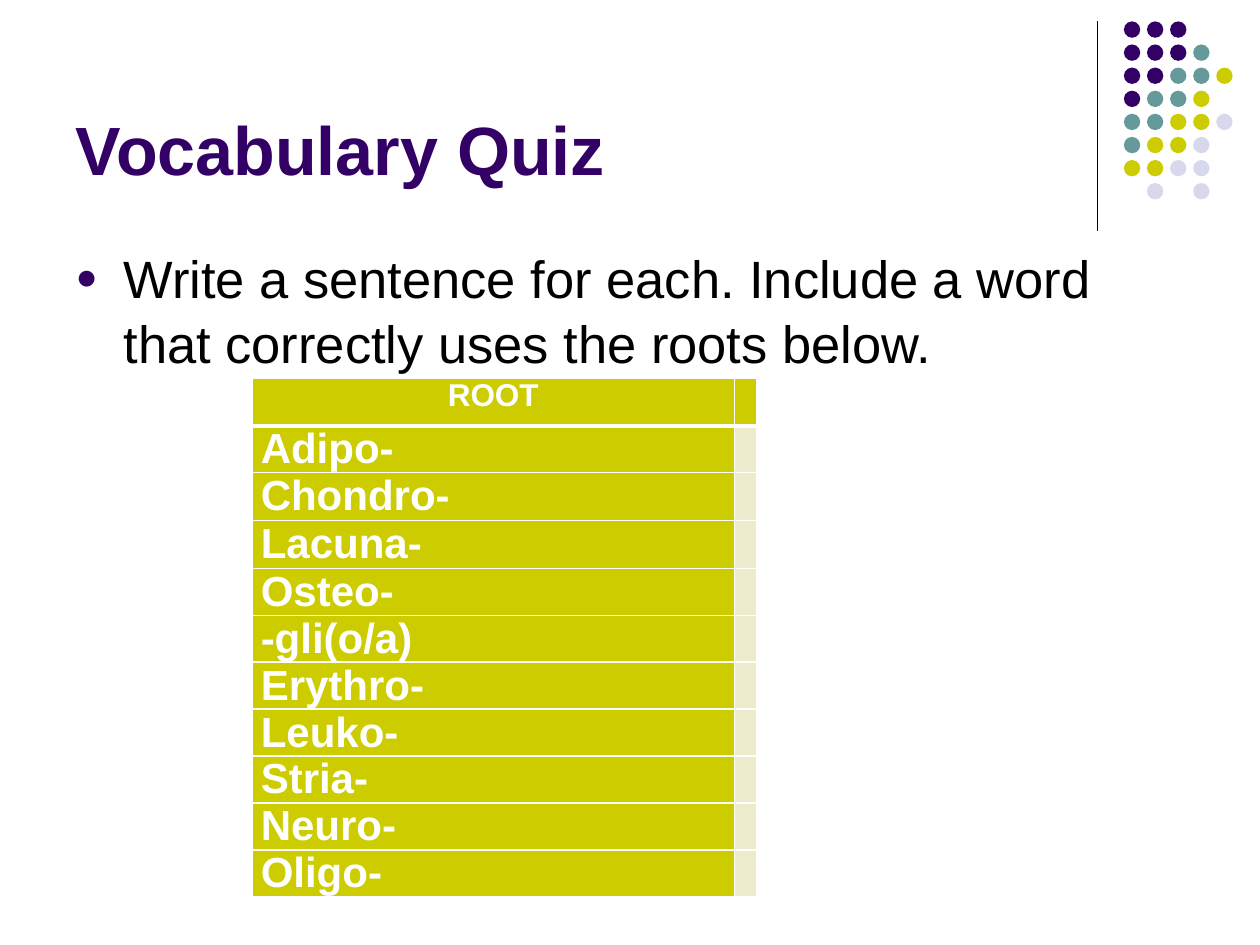
"""Build the vocabulary quiz slide with its dotted corner and table of roots."""
import pptx
import pptx.dml.color
import pptx.enum.shapes
import pptx.enum.text
import pptx.oxml
import pptx.oxml.ns
import pptx.util
from pptx.util import Inches

COLOURS = {
    "purple": "330066", "teal": "669999", "lime": "CCCC00",
    "lilac": "D8D8EC", "pale": "ECECCC", "white": "FFFFFF", "black": "000000",
}
DOT_COLOURS = {"P": "purple", "T": "teal", "L": "lime", "V": "lilac"}
DOT_ROWS = ["PPP", "PPPT", "PPTTL", "PTTL", "TTLLV", "TLLV", "LLVV", " V V"]
DOT_SIZE = 0.13
DOT_PITCH = 0.55 / 3
ROOTS = ["Adipo-", "Chondro-", "Lacuna-", "Osteo-", "-gli(o/a)",
         "Erythro-", "Leuko-", "Stria-", "Neuro-", "Oligo-"]
COLUMN_WIDTHS = [3.83, 0.18]
ROW_HEIGHTS = [0.38, 0.37, 0.38, 0.38] + [0.37] * 7
ALIGN = pptx.enum.text.PP_ALIGN
ANCHOR = pptx.enum.text.MSO_ANCHOR


def rgb(colour):
    return pptx.dml.color.RGBColor.from_string(COLOURS[colour])


def apply_format(target, values):
    for name, value in values.items():
        setattr(target, name, value)


def format_font(font, size, colour, bold=False):
    apply_format(font, {"name": "Arial", "size": pptx.util.Pt(size), "bold": bold})
    font.color.rgb = rgb(colour)


def add_element(parent, xml):
    prefix, rest = xml.split(" ", 1)
    namespace = pptx.oxml.ns.nsdecls("a")
    parent.append(pptx.oxml.parse_xml(f"{prefix} {namespace} {rest}"))


def fill_placeholder(placeholder, box, wording, anchor):
    left, top, width, height = map(Inches, box)
    apply_format(placeholder, {"left": left, "top": top, "width": width, "height": height})
    frame = placeholder.text_frame
    frame.text = wording
    apply_format(frame, {
        "word_wrap": True,
        "auto_size": pptx.enum.text.MSO_AUTO_SIZE.NONE,
        "vertical_anchor": anchor,
    })
    paragraph = frame.paragraphs[0]
    apply_format(paragraph, {"alignment": ALIGN.LEFT, "space_before": pptx.util.Pt(0)})
    return paragraph


def add_title(slide):
    title = fill_placeholder(slide.shapes.title, (0.5, 0.13, 8.25, 1.42),
                             "Vocabulary Quiz", ANCHOR.BOTTOM)
    format_font(title.runs[0].font, 39, "purple", True)


def add_instruction(slide):
    instruction = fill_placeholder(
        slide.placeholders[1], (0.5, 1.88, 9, 4.82),
        "Write a sentence for each. Include a word that correctly uses the roots below.",
        ANCHOR.TOP)
    instruction.line_spacing = 1.04
    properties = instruction._p.get_or_add_pPr()
    properties.set("marL", str(Inches(0.38)))
    properties.set("indent", str(Inches(-0.38)))
    add_element(properties, f'<a:buClr ><a:srgbClr val="{COLOURS["purple"]}"/></a:buClr>')
    add_element(properties, '<a:buSzPct val="70000"/>')
    add_element(properties, '<a:buFont typeface="Arial"/>')
    add_element(properties, '<a:buChar char="●"/>')
    format_font(instruction.runs[0].font, 30, "black")


def add_rule(slide):
    rule = slide.shapes.add_connector(
        pptx.enum.shapes.MSO_CONNECTOR.STRAIGHT,
        Inches(8.71), Inches(0.17), Inches(8.71), Inches(1.83))
    rule.line.color.rgb = rgb("black")
    rule.line.width = pptx.util.Pt(0.75)
    add_element(rule._element.spPr, "<a:effectLst />")


def add_dots(slide):
    cluster = slide.shapes.add_group_shape()
    for row, pattern in enumerate(DOT_ROWS):
        for column, key in enumerate(pattern):
            if key == " ":
                continue
            dot = cluster.shapes.add_shape(
                pptx.enum.shapes.MSO_SHAPE.OVAL,
                Inches(8.92 + column * DOT_PITCH), Inches(0.17 + row * DOT_PITCH),
                Inches(DOT_SIZE), Inches(DOT_SIZE))
            dot.shadow.inherit = False
            dot.fill.solid()
            dot.fill.fore_color.rgb = rgb(DOT_COLOURS[key])
            dot.line.fill.background()


def format_cell(cell, fill, row):
    apply_format(cell, {"margin_left": Inches(0.07), "margin_right": Inches(0.07),
                        "margin_top": 0, "margin_bottom": 0})
    widths = {"L": 1, "R": 1, "T": 3 if row == 1 else 1, "B": 3 if row == 0 else 1}
    for side, width in widths.items():
        add_element(cell._tc.get_or_add_tcPr(),
                    f'<a:ln{side} w="{pptx.util.Pt(width)}"><a:solidFill>'
                    f'<a:srgbClr val="{COLOURS["white"]}"/></a:solidFill></a:ln{side}>')
    cell.fill.solid()
    cell.fill.fore_color.rgb = rgb(fill)


def add_roots_table(slide):
    labels = ["ROOT"] + ROOTS
    roots = slide.shapes.add_table(
        len(labels), len(COLUMN_WIDTHS), Inches(2), Inches(3),
        Inches(sum(COLUMN_WIDTHS)), Inches(sum(ROW_HEIGHTS))).table
    for column, width in zip(roots.columns, COLUMN_WIDTHS):
        column.width = Inches(width)
    for index, (label, height) in enumerate(zip(labels, ROW_HEIGHTS)):
        roots.rows[index].height = Inches(height)
        root, answer = roots.cell(index, 0), roots.cell(index, 1)
        format_cell(root, "lime", index)
        format_cell(answer, "pale" if index else "lime", index)
        root.text = label
        paragraph = root.text_frame.paragraphs[0]
        paragraph.alignment = ALIGN.LEFT if index else ALIGN.CENTER
        format_font(paragraph.runs[0].font, 24 if index else 18, "white", True)


def main():
    deck = pptx.Presentation()
    apply_format(deck, {"slide_width": Inches(10), "slide_height": Inches(7.5)})
    slide = deck.slides.add_slide(deck.slide_layouts[1])
    add_rule(slide)
    add_dots(slide)
    add_title(slide)
    add_instruction(slide)
    add_roots_table(slide)
    deck.save("out.pptx")


if __name__ == "__main__":
    main()
